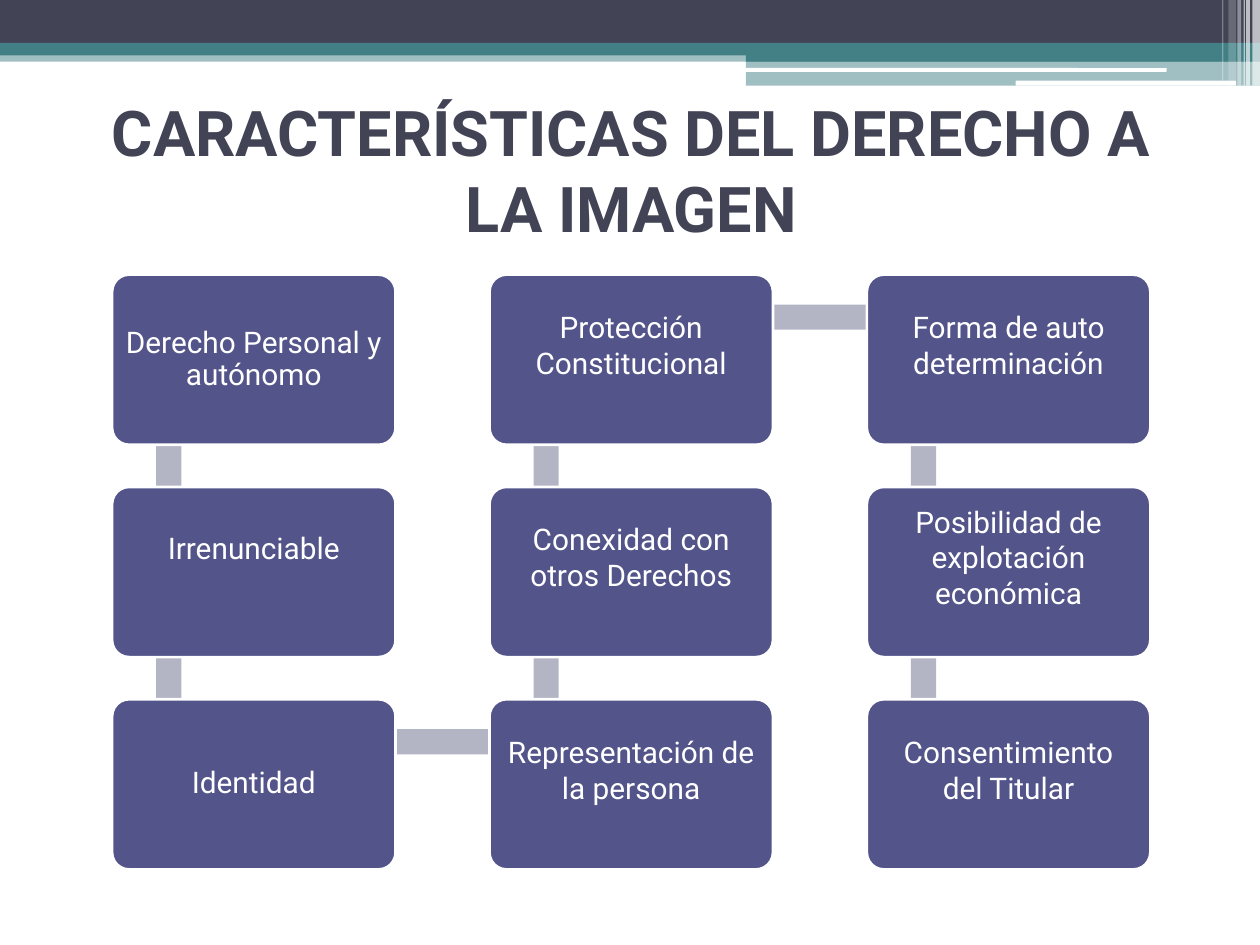
from lxml import etree
from pptx import Presentation
from pptx import util as u
from pptx.dml.color import RGBColor
from pptx.enum import shapes, text
from pptx.oxml import ns

COLS, ROWS = 100, 75
UNIT = u.Inches(10) // COLS
RECT = shapes.MSO_SHAPE.RECTANGLE
ROUND = shapes.MSO_SHAPE.ROUNDED_RECTANGLE
THEME = {
    "font": "Roboto", "head": 36, "body": 17, "edge": 1.5,
    "ink": "424456", "teal": "438086", "white": "FFFFFF",
    "card": "53548A", "link": "B3B4C4",
}


def color(name):
    """Return the theme colour of that name."""
    return RGBColor.from_string(THEME[name])


def assign(item, **values):
    """Set each attribute of an object from its format values."""
    for name, value in values.items():
        setattr(item, name, value)


def place(item, box):
    """Move an object to a box given in grid units."""
    names = ("left", "top", "width", "height")
    assign(item, **{n: round(v * UNIT) for n, v in zip(names, box)})


def block(slide, kind, box, fill, alpha=100, round_by=None):
    """Add a flat, borderless shape, optionally see-through or rounded."""
    item = slide.shapes.add_shape(kind, 0, 0, 0, 0)
    place(item, box)
    item.shadow.inherit = False
    item.line.fill.background()
    item.fill.solid()
    item.fill.fore_color.rgb = color(fill)
    if alpha < 100:
        tone = item.fill._xPr.find(".//" + ns.qn("a:srgbClr"))
        etree.SubElement(tone, ns.qn("a:alpha"), val=str(alpha * 1000))
    if round_by is not None:
        item.adjustments[0] = round_by
    return item


def write(frame, words, size, tone, bold=False, space=1.0, pads=None):
    """Write one centred paragraph in the middle of a text frame."""
    assign(frame, text=words, word_wrap=True,
           auto_size=text.MSO_AUTO_SIZE.NONE,
           vertical_anchor=text.MSO_ANCHOR.MIDDLE, **(pads or {}))
    para = frame.paragraphs[0]
    assign(para, alignment=text.PP_ALIGN.CENTER, line_spacing=space)
    font = para.runs[0].font
    assign(font, name=THEME["font"], size=u.Pt(THEME[size]), bold=bold)
    font.color.rgb = color(tone)


def banner(slide, box):
    """Draw the bands, white rules and right-hand stripes of the header."""
    x, y, w, h = box
    step = 0.592 * w
    bands = (
        (0, 4, w, 0.9, "teal", 50), (0, 0, w, 3.4, "ink", 100),
        (0, 3.4, w, 1, "teal", 100), (step, 3.9, w - step, 1, "teal", 100),
        (step, 4.8, w - step, h - 4.8, "teal", 50),
    )
    rules = ((59.1, 5.4, 33.5, 0.3), (80.6, 6.4, 17.5, 0.4))
    stripes = (
        (99.4, 0.6, h, 65), (98.9, 0.3, h, 65), (98.7, 0.1, h, 60),
        (98.2, 0.3, h, 40), (97.5, 0.6, h - 0.4, 20), (97, 0.1, h - 0.4, 30),
    )
    for dx, dy, bw, bh, fill, alpha in bands:
        block(slide, RECT, (x + dx, y + dy, bw, bh), fill, alpha)
    for dx, dy, bw, bh in rules:
        block(slide, ROUND, (x + dx, y + dy, bw, bh), "white", round_by=0.17)
    for dx, bw, bh, alpha in stripes:
        block(slide, RECT, (x + dx, y, bw, bh), "white", alpha)


def heading(slide, box, words):
    """Move and format the title placeholder."""
    place(slide.shapes.title, box)
    write(slide.shapes.title.text_frame, words, "head", "ink", bold=True)


def card(slide, box, words, space, lift):
    """Draw a rounded card whose text is raised by a deeper bottom inset."""
    item = block(slide, ROUND, box, "card", round_by=0.1)
    item.line.color.rgb = color("white")
    item.line.width = u.Pt(THEME["edge"])
    pads = {"margin_" + side: u.Inches(0.07)
            for side in ("left", "right", "top")}
    pads["margin_bottom"] = u.Inches(0.07 + lift)
    write(item.text_frame, words, "body", "white", space=space, pads=pads)


def snake(slide, box, items, count=3):
    """Lay cards out in columns, alternately down and up, and link them."""
    x, y, w, h = box
    cw, ch, thick = 0.273 * w, 0.286 * h, 2
    dx, dy = (w - cw) / (count - 1), (h - ch) / (count - 1)
    spots = []
    for i in range(len(items)):
        col, row = divmod(i, count)
        row = count - 1 - row if col % 2 else row
        spots.append((x + col * dx, y + row * dy))
    for (ax, ay), (bx, by) in zip(spots, spots[1:]):
        left, top = ax + 0.2 * cw, min(ay, by) + 0.25 * ch
        if ax == bx:
            bar = (left - thick / 2, top, thick, dy)
        else:
            bar = (left, top - thick / 2, dx, thick)
        block(slide, RECT, bar, "link")
    for spot, item in zip(spots, items):
        card(slide, (*spot, cw, ch), *item)


def main():
    """Build the slide and save it."""
    deck = Presentation()
    assign(deck, slide_width=COLS * UNIT, slide_height=ROWS * UNIT)
    slide = deck.slides.add_slide(deck.slide_layouts[5])
    banner(slide, (0, 0, COLS, 6.8))
    heading(slide, (5.1, 7.6, 90, 11.7),
            "CARACTERÍSTICAS DEL DERECHO A LA IMAGEN")
    snake(slide, (8.9, 21.8, 82.4, 47.2), (
        ("Derecho Personal y autónomo", 0.9, 0),
        ("Irrenunciable", 0.9, 0.35),
        ("Identidad", 0.9, 0),
        ("Representación de la persona", 1.0, 0.24),
        ("Conexidad con otros Derechos", 1.0, 0.24),
        ("Protección Constitucional", 1.0, 0.24),
        ("Forma de auto determinación", 1.0, 0.24),
        ("Posibilidad de explotación económica", 1.0, 0.24),
        ("Consentimiento del Titular", 1.0, 0.24),
    ))
    deck.save("out.pptx")


if __name__ == "__main__":
    main()
